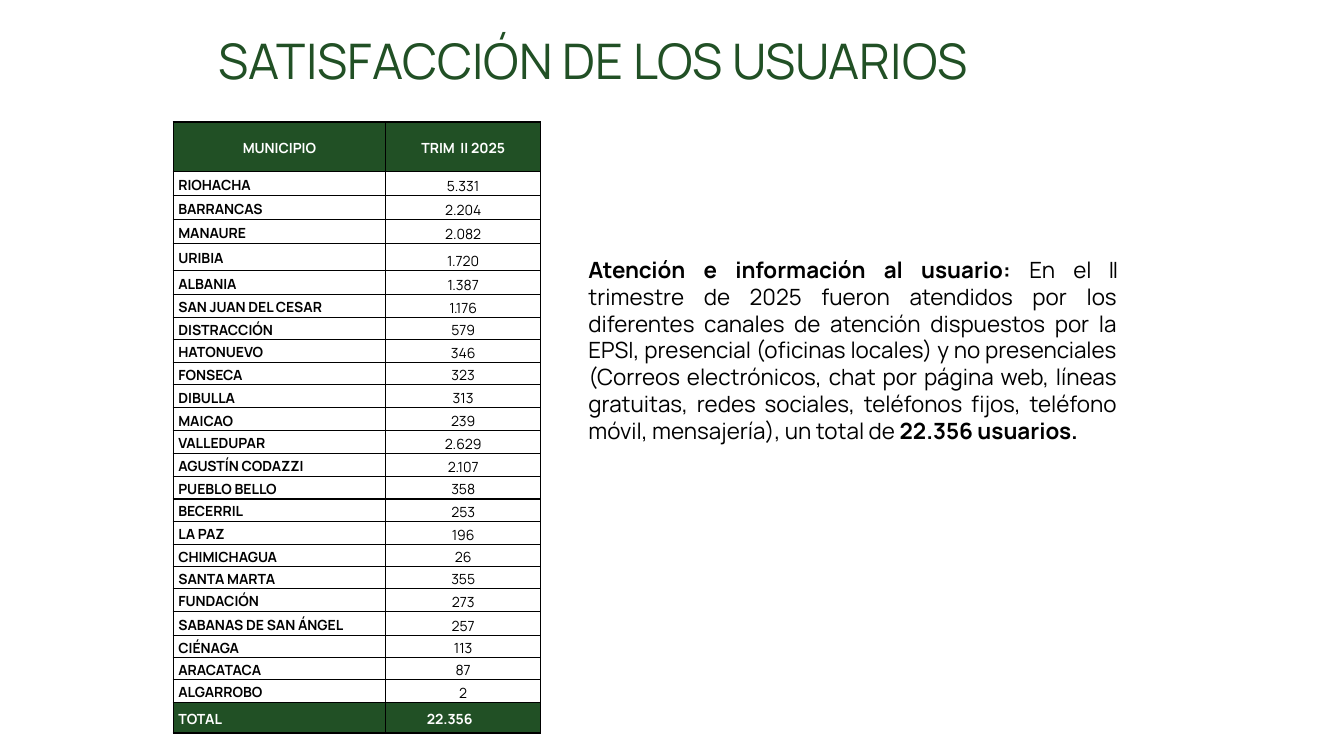
from dataclasses import dataclass

from lxml import etree
from pptx import Presentation
from pptx.dml.color import RGBColor
from pptx.enum.text import MSO_ANCHOR, MSO_AUTO_SIZE, PP_ALIGN
from pptx.oxml.ns import qn
from pptx.util import Pt

LEFT, CENTER, JUSTIFY = PP_ALIGN.LEFT, PP_ALIGN.CENTER, PP_ALIGN.JUSTIFY
MIDDLE, BOTTOM = MSO_ANCHOR.MIDDLE, MSO_ANCHOR.BOTTOM
NO_AUTOFIT, GROW = MSO_AUTO_SIZE.NONE, MSO_AUTO_SIZE.SHAPE_TO_FIT_TEXT
TITLE_ONLY = 5


@dataclass(frozen=True)
class Theme:
    font: str = "Manrope"
    green: RGBColor = RGBColor(0x21, 0x50, 0x25)
    black: RGBColor = RGBColor(0, 0, 0)
    white: RGBColor = RGBColor(255, 255, 255)
    title_size: float = 35
    body_size: float = 16
    table_size: float = 10
    cell_inset: float = 3.6
    border: float = 1


# Municipality, users attended, row height in points
MUNICIPALITIES = [
    ("RIOHACHA", "5.331", 17.3),
    ("BARRANCAS", "2.204", 16.9),
    ("MANAURE", "2.082", 17.3),
    ("URIBIA", "1.720", 19.4),
    ("ALBANIA", "1.387", 17.3),
    ("SAN JUAN DEL CESAR", "1.176", 16.4),
    ("DISTRACCIÓN", "579", 15.4),
    ("HATONUEVO", "346", 16.4),
    ("FONSECA", "323", 16),
    ("DIBULLA", "313", 16.4),
    ("MAICAO", "239", 16.4),
    ("VALLEDUPAR", "2.629", 16.4),
    ("AGUSTÍN CODAZZI", "2.107", 16.4),
    ("PUEBLO BELLO", "358", 16),
    ("BECERRIL", "253", 16),
    ("LA PAZ", "196", 16.4),
    ("CHIMICHAGUA", "26", 16),
    ("SANTA MARTA", "355", 15.4),
    ("FUNDACIÓN", "273", 16.4),
    ("SABANAS DE SAN ÁNGEL", "257", 17.3),
    ("CIÉNAGA", "113", 15.4),
    ("ARACATACA", "87", 15.4),
    ("ALGARROBO", "2", 16.4),
]
HEADER_HEIGHT, TOTAL_HEIGHT = 35.3, 21.8
TOTAL_INDENT = 29.5


class SlideBuilder:
    def __init__(self, slide, theme):
        self.slide = slide
        self.theme = theme

    def add_run(self, paragraph, text, size, color, bold=False, spacing=None):
        run = paragraph.add_run()
        run.text = text
        font = run.font
        font.name, font.size, font.bold = self.theme.font, Pt(size), bold
        font.color.rgb = color
        if spacing is not None:
            font._element.set("spc", str(round(spacing * 100)))

    def place(self, shape, left, top, width, height):
        shape.left, shape.top = Pt(left), Pt(top)
        shape.width, shape.height = Pt(width), Pt(height)

    def title(self, text, *box):
        heading = self.slide.shapes.title
        self.place(heading, *box)
        frame = heading.text_frame
        frame.auto_size, frame.vertical_anchor = NO_AUTOFIT, MIDDLE
        paragraph = frame.paragraphs[0]
        paragraph.alignment, paragraph.line_spacing = LEFT, 0.9
        self.add_run(paragraph, text, self.theme.title_size, self.theme.green)

    def paragraph_box(self, runs, *box):
        """Justified text; each run is (text, bold, letter spacing)."""
        frame = self.slide.shapes.add_textbox(*map(Pt, box)).text_frame
        frame.word_wrap, frame.auto_size = True, GROW
        paragraph = frame.paragraphs[0]
        paragraph.alignment = JUSTIFY
        for text, bold, spacing in runs:
            self.add_run(paragraph, text, self.theme.body_size,
                         self.theme.black, bold, spacing)

    def border(self, cell):
        properties = cell._tc.get_or_add_tcPr()
        for side in ("lnL", "lnR", "lnT", "lnB"):
            line = etree.SubElement(properties, qn(f"a:{side}"),
                                    w=str(Pt(self.theme.border)))
            fill = etree.SubElement(line, qn("a:solidFill"))
            etree.SubElement(fill, qn("a:srgbClr"), val=str(self.theme.black))

    def cell(self, cell, text, align=LEFT, bold=True, band=False,
             anchor=MIDDLE, after=0, indent=None):
        theme = self.theme
        self.border(cell)
        if band:
            cell.fill.solid()
            cell.fill.fore_color.rgb = theme.green
        else:
            cell.fill.background()
        cell.margin_left = Pt(indent or theme.cell_inset)
        cell.margin_right = Pt(theme.cell_inset)
        cell.margin_top = cell.margin_bottom = 0
        cell.vertical_anchor = anchor
        paragraph = cell.text_frame.paragraphs[0]
        paragraph.alignment, paragraph.line_spacing = align, 1.15
        paragraph.space_after = Pt(after)
        self.add_run(paragraph, text, theme.table_size,
                     theme.white if band else theme.black, bold)

    def users_table(self, left, top, widths):
        heights = [HEADER_HEIGHT, *(row[2] for row in MUNICIPALITIES), TOTAL_HEIGHT]
        table = self.slide.shapes.add_table(
            len(heights), len(widths), Pt(left), Pt(top),
            Pt(sum(widths)), Pt(sum(heights))).table
        table.first_row = table.horz_banding = False
        for column, width in zip(table.columns, widths):
            column.width = Pt(width)
        for row, height in zip(table.rows, heights):
            row.height = Pt(height)

        for column, label in enumerate(("MUNICIPIO", "TRIM  II 2025")):
            self.cell(table.cell(0, column), label, CENTER, band=True)
        for index, (name, users, _) in enumerate(MUNICIPALITIES, start=1):
            self.cell(table.cell(index, 0), name)
            self.cell(table.cell(index, 1), users, CENTER, bold=False,
                      anchor=BOTTOM, after=8)
        last = len(heights) - 1
        self.cell(table.cell(last, 0), "TOTAL", band=True)
        self.cell(table.cell(last, 1), "22.356", band=True, indent=TOTAL_INDENT)


def main():
    deck = Presentation()
    deck.slide_width, deck.slide_height = Pt(960), Pt(540)
    slide = deck.slides.add_slide(deck.slide_layouts[TITLE_ONLY])
    builder = SlideBuilder(slide, Theme())
    builder.title("SATISFACCIÓN DE LOS USUARIOS", 149, -6.5, 743, 104.4)
    builder.users_table(123.8, 87.1, (151.6, 110.9))
    builder.paragraph_box([
        ("Atención e información al usuario: ", True, None),
        ("En el", False, None),
        (" II ", False, -0.8),
        ("trimestre de 2025 fueron atendidos por los diferentes canales de "
         "atención dispuestos por la EPSI, presencial (oficinas locales) y no "
         "presenciales (Correos electrónicos, chat por página web, líneas "
         "gratuitas, redes sociales, teléfonos fijos, teléfono móvil, "
         "mensajería), un total de ", False, 0),
        ("22.356 usuarios.", True, 0),
    ], 413.3, 179.3, 391.7, 162.7)
    deck.save("out.pptx")


if __name__ == "__main__":
    main()
